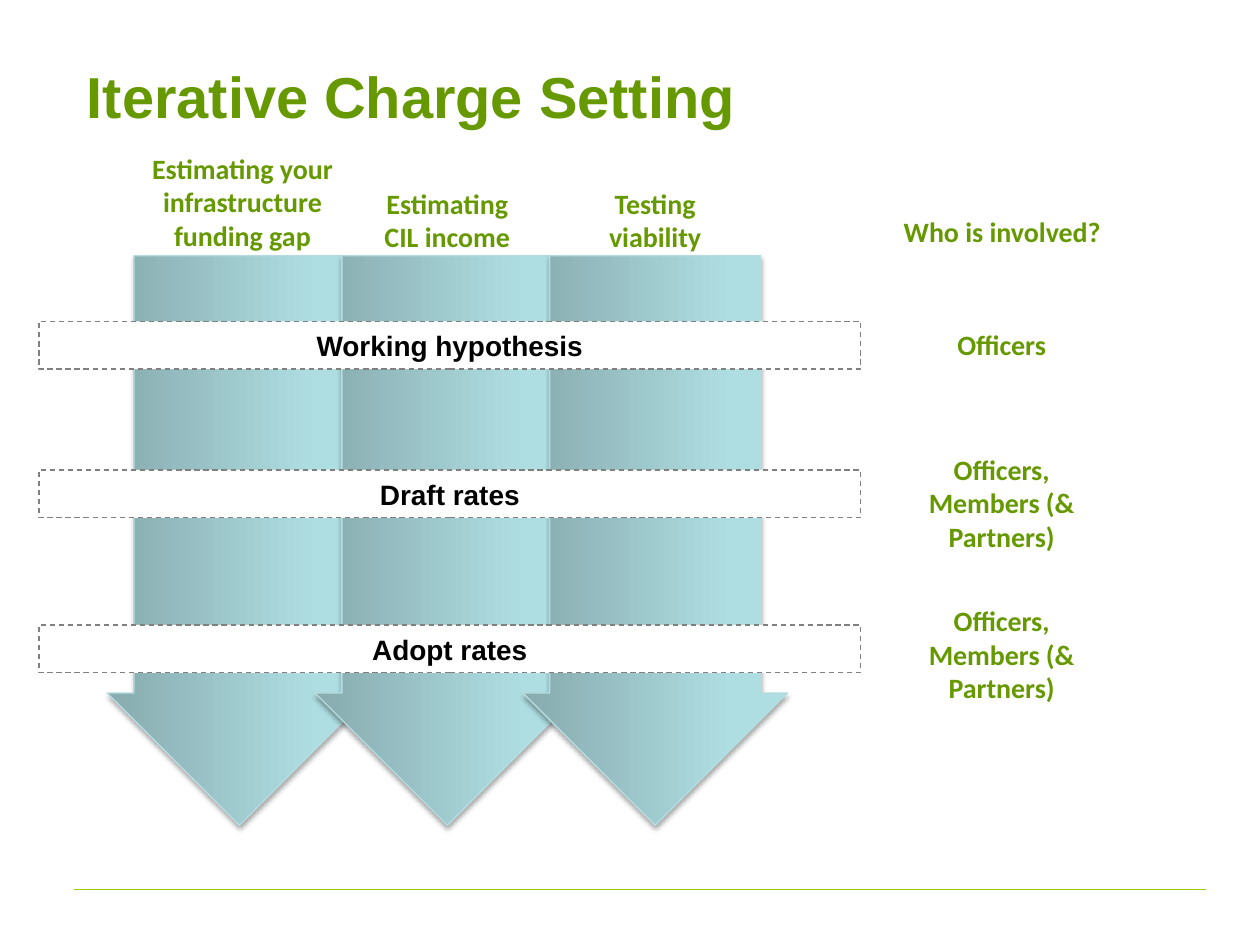
"""Builds the iterative charge setting slide."""
from copy import deepcopy

from lxml import etree
from pptx import Presentation
from pptx import util as u
from pptx.dml.color import RGBColor
from pptx.enum import dml, shapes, text
from pptx.oxml import ns

COLOURS = {
    "green": "669900", "lime": "99CC00", "black": "000000", "white": "FFFFFF",
    "grey": "808080", "edge": "B6DCDF",
    "dark": "87ABAE", "mid": "AFDEE2", "light": "AFE0E4",
}


class SlideBuilder:
    """Draws styled elements on a grid of 100 columns by 75 rows."""

    def __init__(self, deck):
        self.slide = deck.slides.add_slide(deck.slide_layouts[5])
        self.column = deck.slide_width / 100
        self.row = deck.slide_height / 75

    def colour(self, name):
        """Return the named colour."""
        return RGBColor.from_string(COLOURS[name])

    def area(self, left, top, width, height):
        """Turn grid units into lengths."""
        return [u.Emu(round(size * unit)) for size, unit in
                zip((left, top, width, height), (self.column, self.row) * 2)]

    def set_words(self, box, words, font, size, colour, align=text.PP_ALIGN.CENTER):
        """Put one bold paragraph in a shape."""
        frame = box.text_frame
        frame.text = words
        frame.word_wrap = True
        para = frame.paragraphs[0]
        para.alignment = align
        span = para.runs[0].font
        span.name, span.size, span.bold = font, u.Pt(size), True
        span.color.rgb = self.colour(colour)
        return frame

    def outline(self, line, colour):
        """Give a line its colour and width."""
        line.color.rgb = self.colour(colour)
        line.width = u.Pt(0.75)

    def title(self, words, *area):
        """Place and fill the title placeholder."""
        box = self.slide.shapes.title
        box.left, box.top, box.width, box.height = self.area(*area)
        frame = self.set_words(box, words, "Arial", 33, "green", text.PP_ALIGN.LEFT)
        frame.vertical_anchor = text.MSO_ANCHOR.MIDDLE

    def label(self, words, *area):
        """Add a green text box."""
        box = self.slide.shapes.add_textbox(*self.area(*area))
        self.set_words(box, words, "Calibri", 16, "green")

    def stage(self, words, *area):
        """Add a white bar with a dashed edge."""
        bar = self.slide.shapes.add_shape(shapes.MSO_SHAPE.RECTANGLE, *self.area(*area))
        bar.shadow.inherit = False
        bar.fill.solid()
        bar.fill.fore_color.rgb = self.colour("white")
        self.outline(bar.line, "grey")
        bar.line.dash_style = dml.MSO_LINE.DASH
        self.set_words(bar, words, "Arial", 16, "black")

    def arrow(self, *area):
        """Add a downward arrow with a gradient and a soft shadow."""
        arrow = self.slide.shapes.add_shape(shapes.MSO_SHAPE.RIGHT_ARROW, *self.area(*area))
        arrow.rotation = 90
        arrow.adjustments[0], arrow.adjustments[1] = 0.797, 0.5
        arrow.fill.gradient()
        arrow.fill.gradient_angle = 90
        properties = arrow.element.spPr
        stops = properties.find(".//" + ns.qn("a:gsLst"))
        stops.append(deepcopy(stops[-1]))
        for stop, position, name in zip(arrow.fill.gradient_stops, (0, 0.8, 1),
                                        ("dark", "mid", "light")):
            stop.position = position
            stop.color.rgb = self.colour(name)
        self.outline(arrow.line, "edge")
        arrow.shadow.inherit = False
        shadow = etree.SubElement(
            properties.find(ns.qn("a:effectLst")), ns.qn("a:outerShdw"),
            blurRad=str(u.Pt(3.1)), dist=str(u.Pt(1.8)), dir="5400000", rotWithShape="0")
        tint = etree.SubElement(shadow, ns.qn("a:srgbClr"), val=COLOURS["black"])
        etree.SubElement(tint, ns.qn("a:alpha"), val="35000")

    def rule(self, left, right, top):
        """Add a thin horizontal line."""
        start_x, start_y, end_x, end_y = self.area(left, top, right, top)
        rule = self.slide.shapes.add_connector(
            shapes.MSO_CONNECTOR.STRAIGHT, start_x, start_y, end_x, end_y)
        self.outline(rule.line, "lime")
        etree.SubElement(rule.element.spPr, ns.qn("a:effectLst"))


def main():
    """Build and save the deck."""
    deck = Presentation()
    deck.slide_width, deck.slide_height = u.Inches(10), u.Inches(7.5)
    page = SlideBuilder(deck)
    page.rule(5.9, 95.7, 70.6)
    page.title("Iterative Charge Setting", 5.9, 3, 90, 9.2)
    for index in range(3):
        page.arrow(-3.6 + 16.5 * index, 32.4, 45.2, 21)
    for words, left, top, width, height in (
            ("Estimating your infrastructure funding gap", 9.4, 11.5, 19.7, 9.1),
            ("Estimating CIL income", 28.2, 14.3, 14.6, 6.4),
            ("Testing viability", 44.7, 14.3, 14.6, 6.4),
            ("Who is involved?", 70, 16.5, 19.1, 3.8)):
        page.label(words, left, top, width, height)
    partners = "Officers, Members (& Partners)"
    for stage, top, people, people_top, height in (
            ("Working hypothesis", 25.5, "Officers", 25.5, 3.8),
            ("Draft rates", 37.3, partners, 35.4, 9.1),
            ("Adopt rates", 49.6, partners, 47.4, 9.1)):
        page.stage(stage, 3.1, top, 65.2, 3.8)
        page.label(people, 72.2, people_top, 14.6, height)
    deck.save("out.pptx")


if __name__ == "__main__":
    main()
